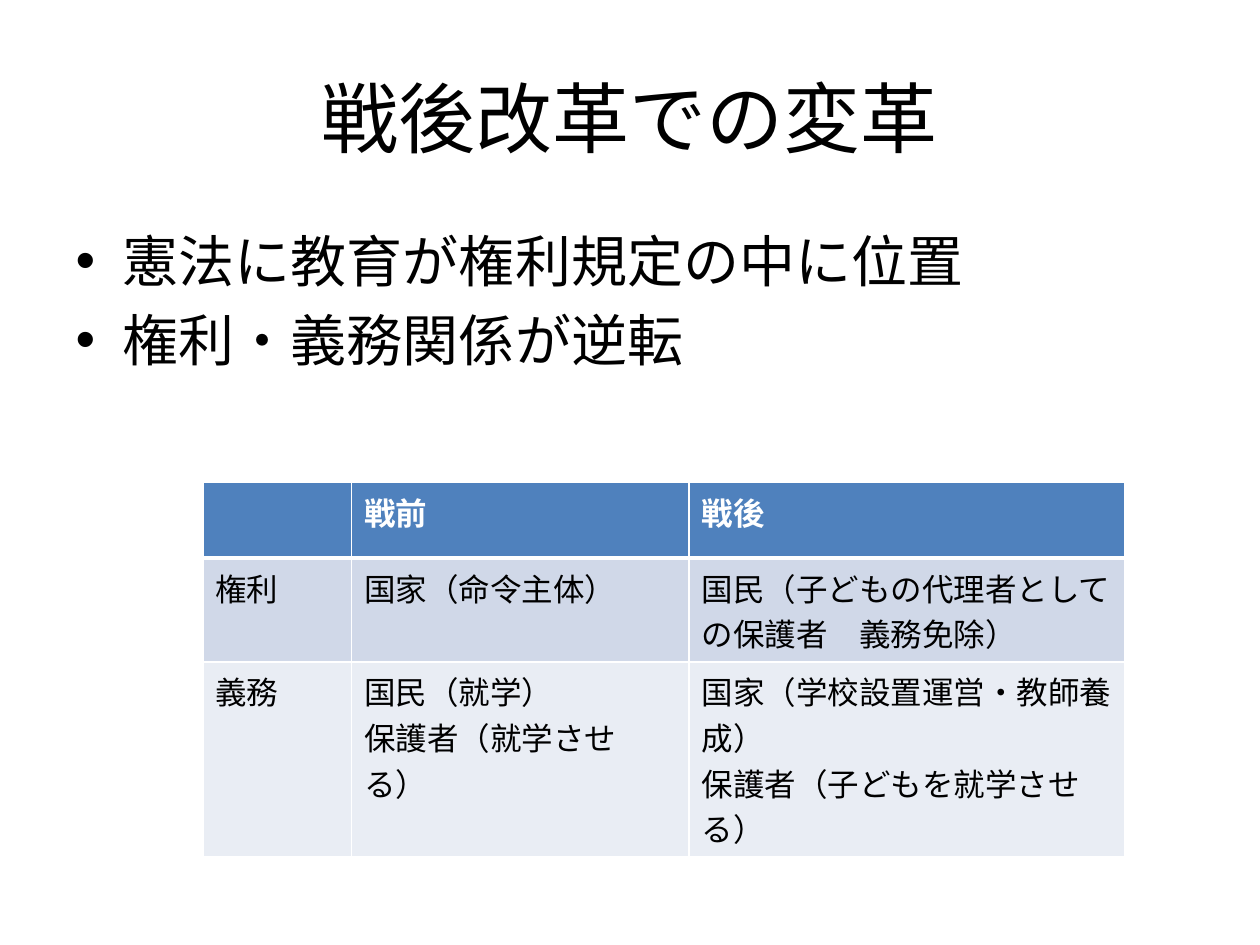
from dataclasses import dataclass

from lxml import etree
from pptx import Presentation
from pptx.dml.color import RGBColor
from pptx.enum.text import MSO_ANCHOR, PP_ALIGN
from pptx.oxml.ns import qn
from pptx.util import Inches, Pt

MIDDLE = MSO_ANCHOR.MIDDLE
CENTER = PP_ALIGN.CENTER


@dataclass(frozen=True)
class Theme:
    """Colours, type sizes and rule widths of the slide."""
    font: str = "Calibri"
    ink: str = "000000"
    paper: str = "FFFFFF"
    header: str = "4F81BD"
    bands: tuple = ("D0D8E8", "E9EDF4")
    title_size: int = 44
    body_size: int = 32
    table_size: int = 18
    rule: int = 1
    header_rule: int = 3


THEME = Theme()
TITLE = "戦後改革での変革"
POINTS = ["憲法に教育が権利規定の中に位置", "権利・義務関係が逆転"]
COLUMN_WIDTHS = [1.18, 2.68, 3.46]
ROW_HEIGHT = 0.6
COMPARISON = [
    [[], ["戦前"], ["戦後"]],
    [["権利"], ["国家（命令主体）"], ["国民（子どもの代理者としての保護者　義務免除）"]],
    [["義務"], ["国民（就学）", "保護者（就学させる）"],
     ["国家（学校設置運営・教師養成）", "保護者（子どもを就学させる）"]],
]


def write_lines(frame, lines, size, color=THEME.ink, bold=False, align=None):
    """Write each line as a paragraph of one formatted run."""
    for index, line in enumerate(lines):
        paragraph = frame.add_paragraph() if index else frame.paragraphs[0]
        paragraph.alignment = align
        run = paragraph.add_run()
        run.text = line
        run.font.name = THEME.font
        run.font.size = Pt(size)
        run.font.bold = bold
        run.font.color.rgb = RGBColor.from_string(color)


def place(shape, left, top, width, height):
    """Move and size a shape, in inches."""
    shape.left, shape.top = Inches(left), Inches(top)
    shape.width, shape.height = Inches(width), Inches(height)


def add_title(slide):
    """Fill the title placeholder."""
    title = slide.shapes.title
    place(title, 0.5, 0.3, 9, 1.25)
    title.text_frame.vertical_anchor = MIDDLE
    write_lines(title.text_frame, [TITLE], THEME.title_size, align=CENTER)


def add_points(slide):
    """Fill the body placeholder with the bulleted points."""
    body = slide.placeholders[1]
    place(body, 0.5, 1.75, 9, 4.95)
    write_lines(body.text_frame, POINTS, THEME.body_size)


def rule_cell(cell, widths):
    """Draw the cell borders, with widths in points by side."""
    properties = cell._tc.get_or_add_tcPr()
    for side, width in widths.items():
        line = etree.SubElement(properties, qn(f"a:ln{side}"), w=str(Pt(width)))
        fill = etree.SubElement(line, qn("a:solidFill"))
        etree.SubElement(fill, qn("a:srgbClr"), val=THEME.paper)


def style_cell(cell, row):
    """Rule and fill a cell according to its row."""
    widths = dict.fromkeys("LRTB", THEME.rule)
    if row == 0:
        widths["B"] = THEME.header_rule
    elif row == 1:
        widths["T"] = THEME.header_rule
    rule_cell(cell, widths)
    color = THEME.bands[(row - 1) % 2] if row else THEME.header
    cell.fill.solid()
    cell.fill.fore_color.rgb = RGBColor.from_string(color)


def add_comparison(slide):
    """Add the table comparing rights and duties before and after the war."""
    table = slide.shapes.add_table(
        len(COMPARISON), len(COLUMN_WIDTHS), Inches(1.61), Inches(3.83),
        Inches(sum(COLUMN_WIDTHS)), Inches(ROW_HEIGHT * len(COMPARISON))).table
    for column, width in zip(table.columns, COLUMN_WIDTHS):
        column.width = Inches(width)
    for row, entries in enumerate(COMPARISON):
        table.rows[row].height = Inches(ROW_HEIGHT)
        is_header = row == 0
        color = THEME.paper if is_header else THEME.ink
        for column, lines in enumerate(entries):
            cell = table.cell(row, column)
            style_cell(cell, row)
            write_lines(cell.text_frame, lines, THEME.table_size, color, is_header)


def main():
    """Build and save the slide."""
    deck = Presentation()
    deck.slide_width, deck.slide_height = Inches(10), Inches(7.5)
    slide = deck.slides.add_slide(deck.slide_layouts[1])
    slide.background.fill.solid()
    slide.background.fill.fore_color.rgb = RGBColor.from_string(THEME.paper)
    add_title(slide)
    add_points(slide)
    add_comparison(slide)
    deck.save("out.pptx")


if __name__ == "__main__":
    main()
